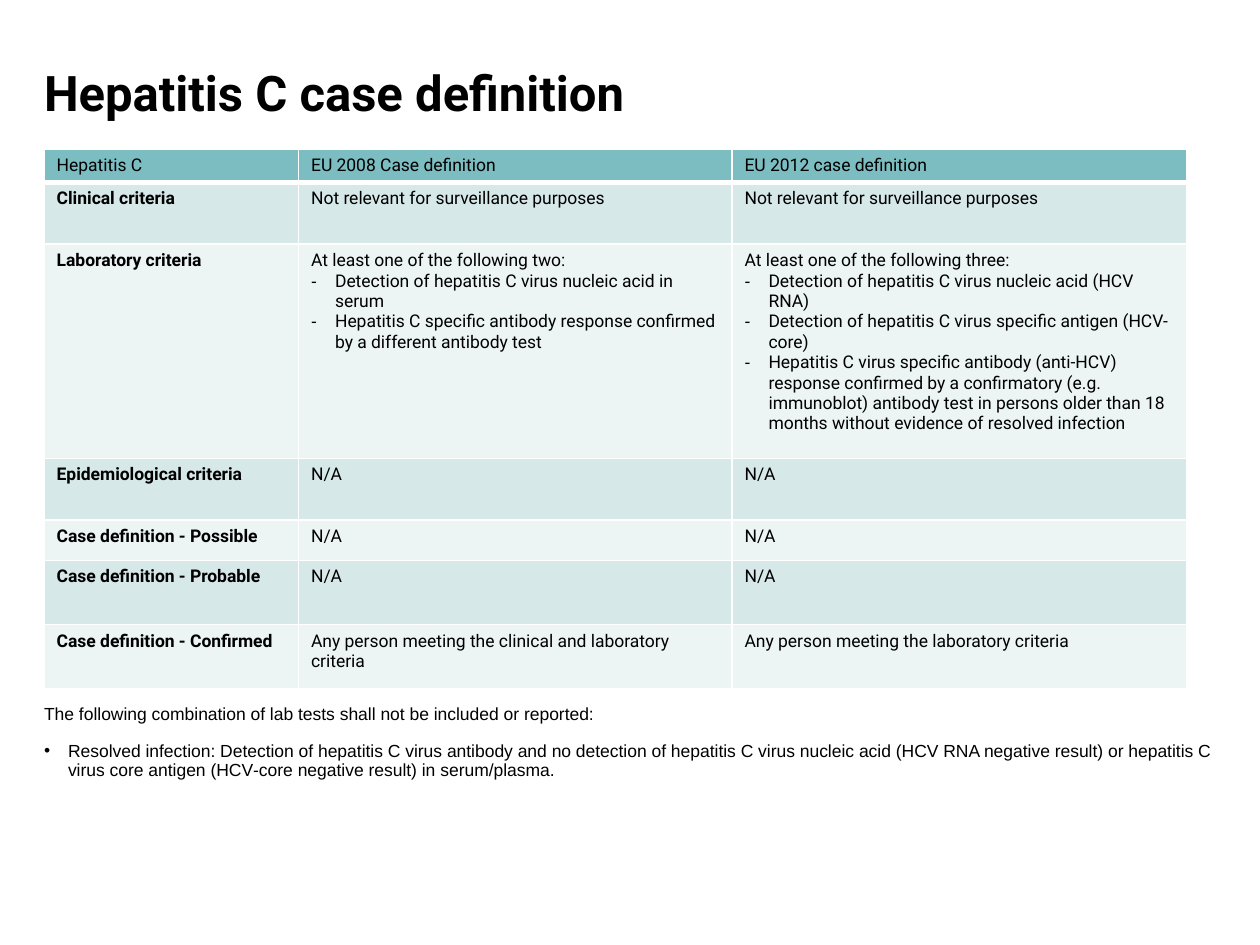
from lxml.etree import SubElement
from pptx import Presentation
from pptx.dml.color import RGBColor
from pptx.enum.text import MSO_ANCHOR
from pptx.oxml.ns import qn
from pptx.util import Pt


def color(hex_string):
    return RGBColor.from_string(hex_string)


def format_paragraph(paragraph, font_name, size, bold=False, bullet=None):
    if bullet:
        properties = paragraph._p.get_or_add_pPr()
        properties.set("marL", str(Pt(13.7)))
        properties.set("indent", str(-Pt(13.7)))
        SubElement(properties, qn("a:buFont"), typeface="Arial")
        SubElement(properties, qn("a:buChar"), char=bullet)
    for run in paragraph.runs:
        run.font.name = font_name
        run.font.size = Pt(size)
        run.font.bold = bold
        run.font.color.rgb = color("000000")


criteria = [
    ("Hepatitis C", "EU 2008 Case definition", "EU 2012 case definition"),
    ("Clinical criteria", "Not relevant for surveillance purposes", "Not relevant for surveillance purposes"),
    (
        "Laboratory criteria",
        "At least one of the following two:\n"
        "Detection of hepatitis C virus nucleic acid in serum\n"
        "Hepatitis C specific antibody response confirmed by a different antibody test",
        "At least one of the following three:\n"
        "Detection of hepatitis C virus nucleic acid (HCV RNA)\n"
        "Detection of hepatitis C virus specific antigen (HCV-core)\n"
        "Hepatitis C virus specific antibody (anti-HCV) response confirmed by a confirmatory "
        "(e.g. immunoblot) antibody test in persons older than 18 months without evidence of resolved infection",
    ),
    ("Epidemiological criteria", "N/A", "N/A"),
    ("Case definition - Possible", "N/A", "N/A"),
    ("Case definition - Probable", "N/A", "N/A"),
    (
        "Case definition - Confirmed",
        "Any person meeting the clinical and laboratory criteria",
        "Any person meeting the laboratory criteria",
    ),
]
column_widths = [145.4, 247.7, 259.9]
row_heights = [18.9, 35.3, 122.4, 35.3, 23, 36.7, 36.7]
left = 25.2

presentation = Presentation()
presentation.slide_width = Pt(720)
presentation.slide_height = Pt(540)
slide = presentation.slides.add_slide(presentation.slide_layouts[6])

title = slide.shapes.add_textbox(Pt(left), Pt(17.3), Pt(580.3), Pt(74.9)).text_frame
title.text = "Hepatitis C case definition"
title.vertical_anchor = MSO_ANCHOR.MIDDLE
format_paragraph(title.paragraphs[0], "Roboto", 28, bold=True)

note = slide.shapes.add_textbox(Pt(left), Pt(403.2), Pt(671), Pt(56.9)).text_frame
note.text = (
    "The following combination of lab tests shall not be included or reported:\n"
    "Resolved infection: Detection of hepatitis C virus antibody and no detection of hepatitis C virus "
    "nucleic acid (HCV RNA negative result) or hepatitis C virus core antigen "
    "(HCV‐core negative result) in serum/plasma."
)
note.paragraphs[1].space_before = Pt(10)
for paragraph, bullet in zip(note.paragraphs, (None, "•")):
    format_paragraph(paragraph, "Arial", 10, bullet=bullet)

for frame in (title, note):
    frame.word_wrap = True
    frame.margin_left = frame.margin_right = frame.margin_top = frame.margin_bottom = 0
    for paragraph in frame.paragraphs:
        paragraph.line_spacing = 0.9

definitions = slide.shapes.add_table(
    len(criteria), len(column_widths), Pt(left), Pt(85), Pt(sum(column_widths)), Pt(sum(row_heights))
).table
for column, width in zip(definitions.columns, column_widths):
    column.width = Pt(width)
for row, height in zip(definitions.rows, row_heights):
    row.height = Pt(height)

for row_index, texts in enumerate(criteria):
    fill = "7CBDC1" if row_index == 0 else ("ECF4F4", "D7E8E9")[row_index % 2]
    border_widths = {
        "a:lnL": 1,
        "a:lnR": 1,
        "a:lnT": 3 if row_index == 1 else 1,
        "a:lnB": 3 if row_index == 0 else 1,
    }
    for column_index, text in enumerate(texts):
        cell = definitions.cell(row_index, column_index)
        cell_properties = cell._tc.get_or_add_tcPr()
        for side, width in border_widths.items():
            border = SubElement(cell_properties, qn(side), w=str(Pt(width)))
            SubElement(SubElement(border, qn("a:solidFill")), qn("a:srgbClr"), val="FFFFFF")
        cell.fill.solid()
        cell.fill.fore_color.rgb = color(fill)
        cell.text_frame.text = text
        is_label = row_index > 0 and column_index == 0
        for line_index, paragraph in enumerate(cell.text_frame.paragraphs):
            format_paragraph(paragraph, "Roboto", 10, bold=is_label, bullet="-" if line_index else None)

presentation.save("out.pptx")
